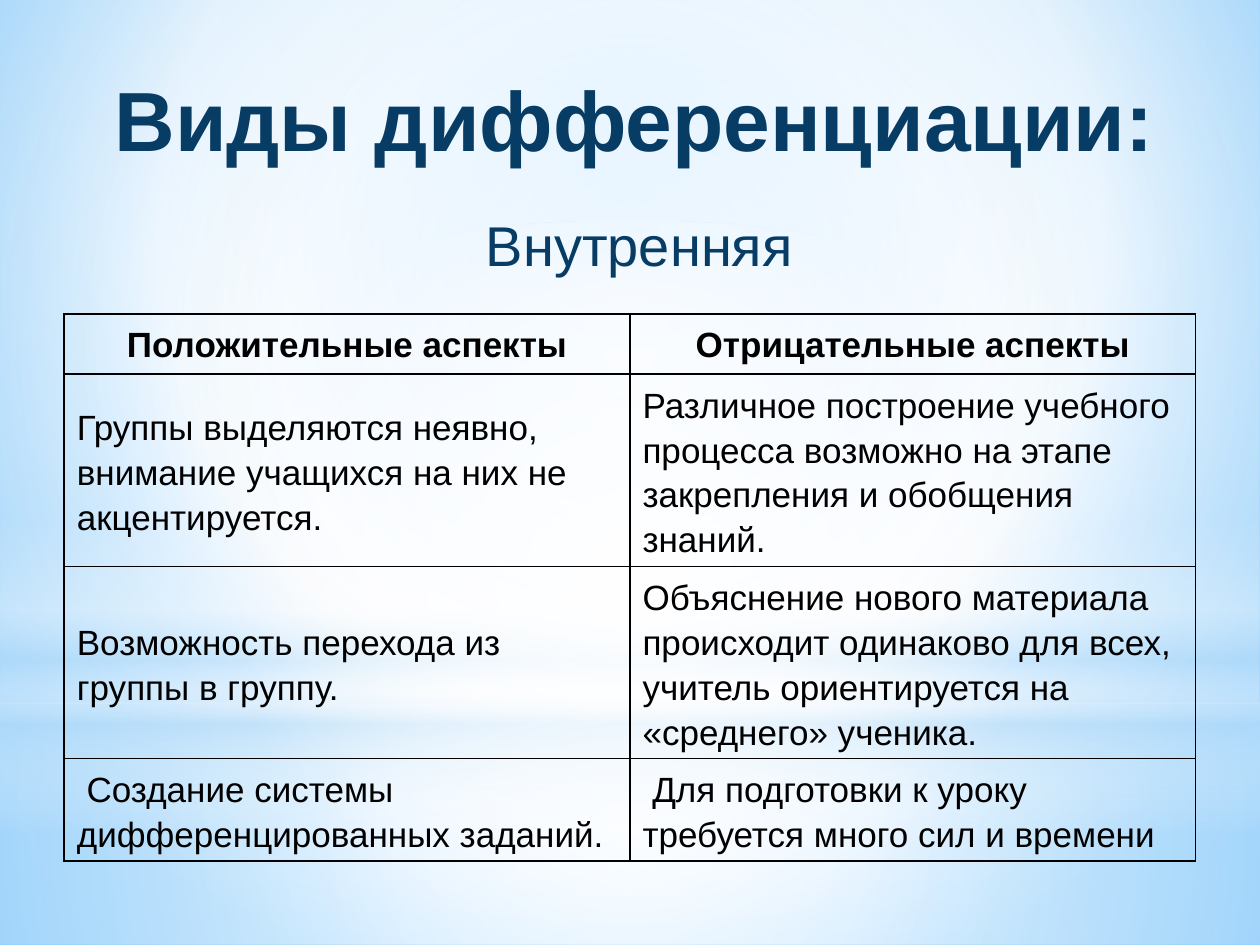
from dataclasses import dataclass
from lxml.etree import SubElement
from pptx import Presentation
from pptx.dml.color import RGBColor
from pptx.enum.shapes import MSO_SHAPE
from pptx.enum.text import MSO_ANCHOR, MSO_AUTO_SIZE, PP_ALIGN
from pptx.oxml.ns import qn
from pptx.util import Inches, Pt


@dataclass(frozen=True)
class Theme:
    font: str = "Arial"
    navy: str = "073C65"
    black: str = "000000"
    white: str = "FFFFFF"
    pale: str = "B4DCFA"
    sky: str = "9ED5FF"
    blue: str = "5BB9FF"
    head: int = 48
    sub: int = 32
    cell: int = 20


THEME = Theme()
CENTER = (50, 50, 50, 50)

ROWS = [
    ("Положительные аспекты", "Отрицательные аспекты"),
    ("Группы выделяются неявно, внимание учащихся на них не акцентируется.",
     "Различное построение учебного процесса возможно на этапе закрепления и обобщения знаний."),
    ("Возможность перехода из группы в группу.",
     "Объяснение нового материала происходит одинаково для всех, "
     "учитель ориентируется на «среднего» ученика."),
    (" Создание системы дифференцированных заданий.",
     " Для подготовки к уроку требуется много сил и времени"),
]


def write(frame, text, size, color, bold=False, align=PP_ALIGN.LEFT, line=None, after=0):
    frame.word_wrap = True
    para = frame.paragraphs[0]
    para.alignment = align
    para.space_after = Pt(after)
    if line:
        para.line_spacing = line
    run = para.add_run()
    run.text = text
    run.font.name = THEME.font
    run.font.size = Pt(size)
    run.font.bold = bold
    run.font.color.rgb = RGBColor.from_string(color)
    return para


def blend(fill, root, stops, focus=None, angle=0):
    fill.solid()
    solid = next(root.iter(qn("a:solidFill")))
    grad = solid.makeelement(qn("a:gradFill"), {"rotWithShape": "1"})
    solid.getparent().replace(solid, grad)
    group = SubElement(grad, qn("a:gsLst"))
    for place, color, alpha in stops:
        stop = SubElement(group, qn("a:gs"), pos=str(place * 1000))
        tint = SubElement(stop, qn("a:srgbClr"), val=color)
        if alpha < 100:
            SubElement(tint, qn("a:alpha"), val=str(alpha * 1000))
    if focus:
        radial = SubElement(grad, qn("a:path"), {"path": "circle"})
        sides = {side: str(part * 1000) for side, part in zip("ltrb", focus)}
        SubElement(radial, qn("a:fillToRect"), sides)
    else:
        SubElement(grad, qn("a:lin"), ang=str(angle * 60000), scaled="0")


def add_glow(slide, kind, top, height, stops, **style):
    shape = slide.shapes.add_shape(kind, 0, Inches(top), Inches(10), Inches(height))
    shape.shadow.inherit = False
    shape.line.fill.background()
    blend(shape.fill, shape._element.spPr, stops, **style)


def add_sky(slide):
    white, pale = THEME.white, THEME.pale
    base = [(0, THEME.sky, 100), (60, white, 100), (100, THEME.blue, 100)]
    blend(slide.background.fill, slide._element, base, focus=(20, 10, 20, 60))
    rect = MSO_SHAPE.RECTANGLE
    add_glow(slide, rect, 5.58, 1.92,
             [(0, white, 91), (37, white, 76), (100, pale, 79)], focus=CENTER)
    add_glow(slide, rect, 0, 5.58,
             [(0, white, 89), (48, white, 62), (100, pale, 79)], focus=CENTER)
    add_glow(slide, rect, 4.12, 2.5,
             [(0, white, 0), (29, white, 30), (45, pale, 40),
              (55, white, 26), (65, pale, 60), (100, white, 0)], angle=90)
    add_glow(slide, MSO_SHAPE.OVAL, 1.75, 5.58,
             [(0, white, 100), (56, white, 0)], focus=CENTER)


def place(slide, holder, box, anchor):
    holder.left, holder.top, holder.width, holder.height = map(Inches, box)
    slide.shapes._spTree.append(holder._element)
    frame = holder.text_frame
    frame.auto_size = MSO_AUTO_SIZE.NONE
    frame.vertical_anchor = anchor
    return frame


def add_heads(slide):
    title, body = slide.placeholders
    frame = place(slide, title, (0.35, 0.29, 9.37, 1.1), MSO_ANCHOR.BOTTOM)
    write(frame, "Виды дифференциации:", THEME.head, THEME.navy,
          bold=True, align=PP_ALIGN.CENTER)
    frame = place(slide, body, (0.43, 1.62, 9.29, 5.51), MSO_ANCHOR.TOP)
    para = write(frame, "Внутренняя", THEME.sub, THEME.navy,
                 align=PP_ALIGN.CENTER, after=3)
    props = para._p.get_or_add_pPr()
    props.set("marL", "0")
    props.set("indent", "0")
    SubElement(props, qn("a:buNone"))


def frame_cell(cell):
    props = cell._tc.get_or_add_tcPr()
    for side in "LRTB":
        edge = SubElement(props, qn(f"a:ln{side}"), w=str(Pt(1)))
        fill = SubElement(edge, qn("a:solidFill"))
        SubElement(fill, qn("a:srgbClr"), val=THEME.black)
    cell.fill.background()


def add_grid(slide):
    heights = (0.48, 1.49, 1.49, 0.48)
    table = slide.shapes.add_table(len(ROWS), 2, Inches(0.51), Inches(2.49),
                                   Inches(8.98), Inches(sum(heights))).table
    table.first_row = table.horz_banding = False
    for row, (texts, height) in enumerate(zip(ROWS, heights)):
        table.rows[row].height = Inches(height)
        head = row == 0
        for col, text in enumerate(texts):
            cell = table.cell(row, col)
            frame_cell(cell)
            cell.vertical_anchor = MSO_ANCHOR.TOP if head else MSO_ANCHOR.MIDDLE
            write(cell.text_frame, text, THEME.cell, THEME.black, bold=head,
                  align=PP_ALIGN.CENTER if head else PP_ALIGN.LEFT, line=1.15, after=10)


def main():
    deck = Presentation()
    deck.slide_width, deck.slide_height = Inches(10), Inches(7.5)
    slide = deck.slides.add_slide(deck.slide_layouts[1])
    add_sky(slide)
    add_heads(slide)
    add_grid(slide)
    deck.save("out.pptx")


if __name__ == "__main__":
    main()
